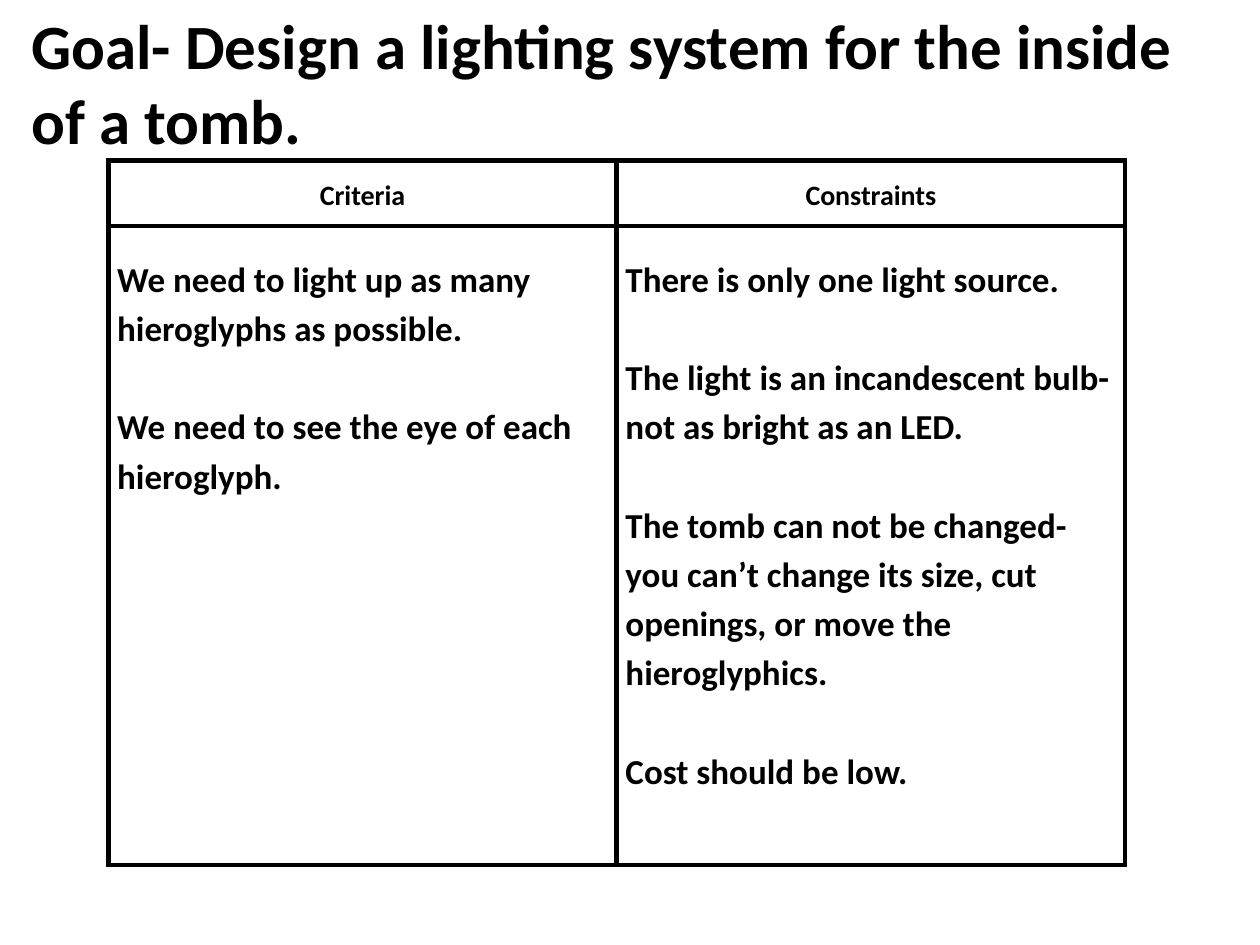
import pptx
import pptx.dml.color
import pptx.enum.text
import pptx.oxml.ns
import pptx.util
from lxml import etree

BLACK = pptx.dml.color.RGBColor(0, 0, 0)
FONT = "Calibri"
WIDTH, HEIGHT = pptx.util.Inches(10), pptx.util.Inches(7.5)
LINE_SPACING = 1.15
BORDER = pptx.util.Pt(3)
SIDE_MARGIN = pptx.util.Inches(0.07)
ENTRY_MARGIN = pptx.util.Inches(0.21)
ENTRY_GAP = pptx.util.Pt(28)

GOAL = "Goal- Design a lighting system for the inside of a tomb."
REQUIREMENTS = {
    "Criteria": [
        "We need to light up as many hieroglyphs as possible.",
        "We need to see the eye of each hieroglyph.",
    ],
    "Constraints": [
        "There is only one light source.",
        "The light is an incandescent bulb- not as bright as an LED.",
        "The tomb can not be changed- you can’t change its size, cut "
        "openings, or move the hieroglyphics.",
        "Cost should be low.",
    ],
}


def add_bold_run(paragraph, text, size):
    run = paragraph.add_run()
    run.text = text
    run.font.name = FONT
    run.font.size = pptx.util.Pt(size)
    run.font.bold = True
    run.font.color.rgb = BLACK


def add_goal(slide):
    goal = slide.shapes.add_textbox(
        int(WIDTH * 0.015), 0, int(WIDTH * 0.932), int(HEIGHT * 0.175))
    goal.text_frame.word_wrap = True
    add_bold_run(goal.text_frame.paragraphs[0], GOAL, 36)


def set_borders(cell):
    properties = cell._tc.get_or_add_tcPr()
    qn = pptx.oxml.ns.qn
    for position, side in enumerate(("lnL", "lnR", "lnT", "lnB")):
        line = etree.Element(qn(f"a:{side}"), w=str(int(BORDER)))
        fill = etree.SubElement(line, qn("a:solidFill"))
        etree.SubElement(fill, qn("a:srgbClr"), val=str(BLACK))
        properties.insert(position, line)


def fill_cell(cell, entries, size, alignment, anchor, top_margin=0):
    cell.fill.background()
    set_borders(cell)
    cell.margin_left = cell.margin_right = SIDE_MARGIN
    cell.margin_top, cell.margin_bottom = top_margin, 0
    cell.vertical_anchor = anchor
    for index, entry in enumerate(entries):
        frame = cell.text_frame
        paragraph = frame.add_paragraph() if index else frame.paragraphs[0]
        paragraph.alignment = alignment
        paragraph.line_spacing = LINE_SPACING
        if index:
            paragraph.space_before = ENTRY_GAP
        add_bold_run(paragraph, entry, size)


def add_requirements(slide):
    align, anchor = pptx.enum.text.PP_ALIGN, pptx.enum.text.MSO_ANCHOR
    row_heights = [pptx.util.Inches(0.52), pptx.util.Inches(5.07)]
    column_width = int(WIDTH * 0.4035)
    table = slide.shapes.add_table(
        len(row_heights), len(REQUIREMENTS), int(WIDTH * 0.086),
        int(HEIGHT * 0.17), column_width * len(REQUIREMENTS),
        sum(row_heights)).table
    for row, height in zip(table.rows, row_heights):
        row.height = height
    for column, (heading, entries) in enumerate(REQUIREMENTS.items()):
        table.columns[column].width = column_width
        fill_cell(table.cell(0, column), [heading], 16,
                  align.CENTER, anchor.MIDDLE)
        fill_cell(table.cell(1, column), entries, 20,
                  align.LEFT, anchor.TOP, ENTRY_MARGIN)


def main():
    deck = pptx.Presentation()
    deck.slide_width, deck.slide_height = WIDTH, HEIGHT
    slide = deck.slides.add_slide(deck.slide_layouts[6])
    # Criteria and constraints, side by side
    add_requirements(slide)
    # Goal across the top
    add_goal(slide)
    deck.save("out.pptx")


if __name__ == "__main__":
    main()
